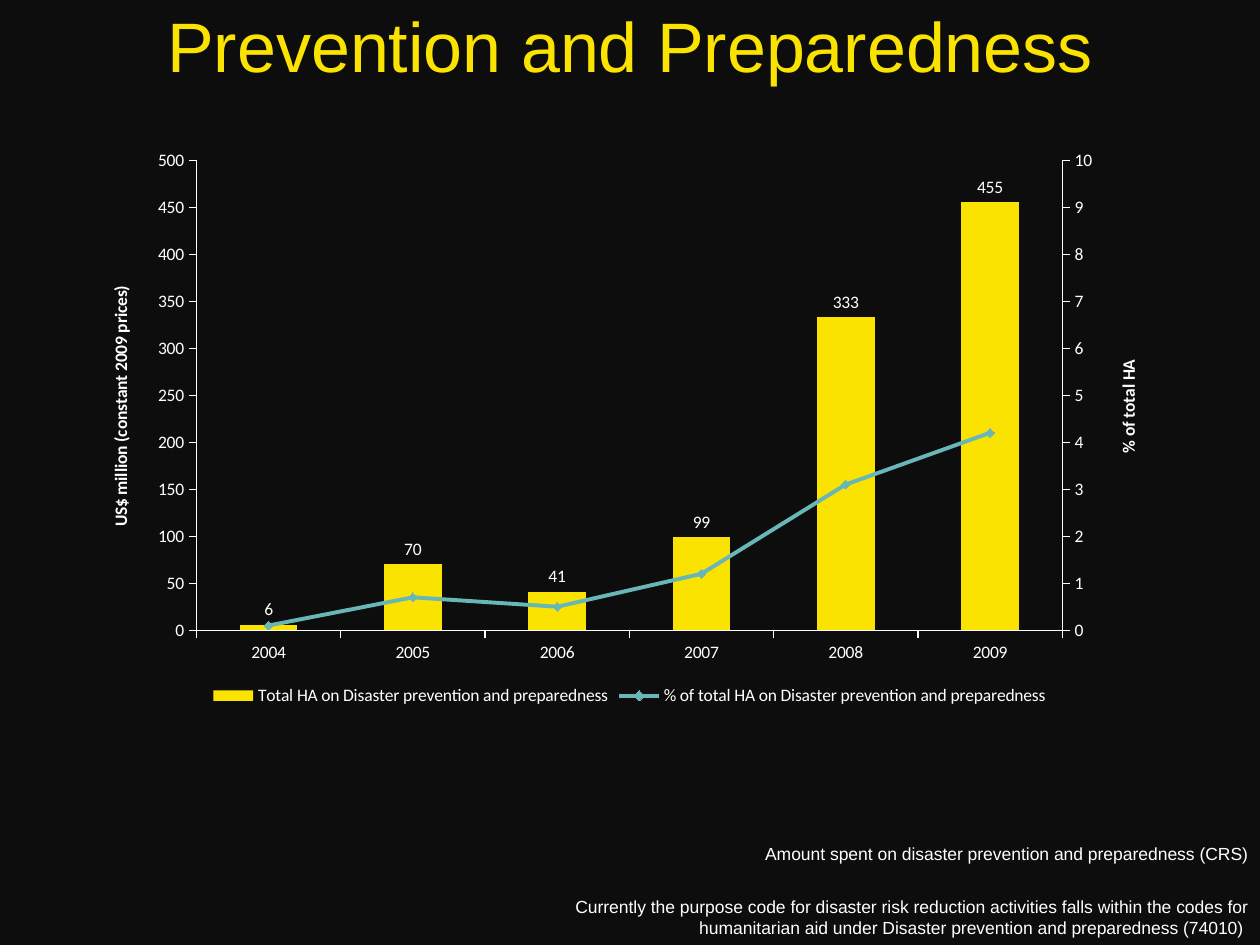
from copy import deepcopy

from lxml import etree
from pptx import Presentation
from pptx.chart.axis import ValueAxis
from pptx.chart.data import CategoryChartData
from pptx.dml.color import RGBColor
from pptx.enum.chart import XL_CHART_TYPE as ChartType, XL_LABEL_POSITION as LabelPosition
from pptx.enum.chart import XL_LEGEND_POSITION as LegendPosition, XL_MARKER_STYLE as Marker
from pptx.enum.chart import XL_TICK_MARK as Tick
from pptx.enum.text import MSO_ANCHOR as Anchor, MSO_AUTO_SIZE as AutoSize, PP_ALIGN as Align
from pptx.oxml import parse_xml
from pptx.oxml.ns import qn
from pptx.util import Inches, Pt

BLACK, WHITE, YELLOW, TEAL = "0D0D0D", "FFFFFF", "FAE300", "68B6B8"
TITLE = "Prevention and Preparedness"
NOTES = [
    ("Amount spent on disaster prevention and preparedness (CRS)", (3.62, 6.64, 6.38, 0.27)),
    ("Currently the purpose code for disaster risk reduction activities falls within the codes for "
     "humanitarian aid under Disaster prevention and preparedness (74010) ", (3.86, 7.06, 6.14, 0.44)),
]
YEARS = ["2004", "2005", "2006", "2007", "2008", "2009"]
SERIES = [
    ("Total HA on Disaster prevention and preparedness", [6, 70, 41, 99, 333, 455]),
    ("% of total HA on Disaster prevention and preparedness", [0.1, 0.7, 0.5, 1.2, 3.1, 4.2]),
]
LEFT_AXIS = ("US$ million (constant 2009 prices)", 500, 50)
RIGHT_AXIS = ("% of total HA", 10, 1)
PLOT_AREA = {"x": 0.1, "y": 0.04, "w": 0.8, "h": 0.82}
RIGHT_IDS = ("50010", "50020")


def color(value):
    return RGBColor.from_string(value)


def paint(fill, value):
    fill.solid()
    fill.fore_color.rgb = color(value)


def style_font(font, name, size, value):
    font.name = name
    font.size = Pt(size)
    font.color.rgb = color(value)


def write(box, text, place, size, value, align):
    box.left, box.top, box.width, box.height = map(Inches, place)
    frame = box.text_frame
    frame.word_wrap = True
    frame.text = text
    para = frame.paragraphs[0]
    para.alignment = align
    style_font(para.runs[0].font, "Arial", size, value)
    return frame


def style_axis(axis):
    axis.major_tick_mark = Tick.OUTSIDE
    axis.minor_tick_mark = Tick.NONE
    axis.format.line.color.rgb = color(WHITE)
    axis.format.line.width = Pt(0.75)


def style_value_axis(axis, title, top, step):
    style_axis(axis)
    axis.has_major_gridlines = False
    axis.minimum_scale, axis.maximum_scale, axis.major_unit = 0, top, step
    axis.tick_labels.number_format = "0"
    axis.tick_labels.number_format_is_linked = False
    frame = axis.axis_title.text_frame
    frame.text = title
    font = frame.paragraphs[0].runs[0].font
    style_font(font, "Calibri", 10, WHITE)
    font.bold = True
    body = axis.axis_title._element.find(".//" + qn("a:bodyPr"))
    body.set("rot", "-5400000")
    body.set("vert", "horz")


def fix_plot_area(area):
    layout = area.find(qn("c:layout"))
    if layout is None:
        layout = etree.Element(qn("c:layout"))
        area.insert(0, layout)
    manual = etree.SubElement(layout, qn("c:manualLayout"))
    settings = {"layoutTarget": "inner", "xMode": "edge", "yMode": "edge", **PLOT_AREA}
    for name, value in settings.items():
        etree.SubElement(manual, qn("c:" + name)).set("val", str(value))


def move_line_to_right_axis(area):
    bars = area.find(qn("c:barChart"))
    line_series = bars.findall(qn("c:ser"))[1]
    for flag in line_series.findall(qn("c:invertIfNegative")):
        line_series.remove(flag)
    lines = parse_xml(
        '<c:lineChart xmlns:c="http://schemas.openxmlformats.org/drawingml/2006/chart">'
        '<c:grouping val="standard"/><c:varyColors val="0"/><c:marker val="1"/>'
        f'<c:axId val="{RIGHT_IDS[0]}"/><c:axId val="{RIGHT_IDS[1]}"/></c:lineChart>')
    lines.insert(2, line_series)
    bars.addnext(lines)

    value_axis = area.find(qn("c:valAx"))
    right_category = deepcopy(area.find(qn("c:catAx")))
    right_value = deepcopy(value_axis)
    value_axis.addnext(right_category)
    right_category.addnext(right_value)
    for axis, own, other in ((right_category, *RIGHT_IDS), (right_value, *RIGHT_IDS[::-1])):
        axis.find(qn("c:axId")).set("val", own)
        axis.find(qn("c:crossAx")).set("val", other)
    right_category.find(qn("c:delete")).set("val", "1")
    right_value.find(qn("c:axPos")).set("val", "r")
    right_value.find(qn("c:crosses")).set("val", "max")
    return ValueAxis(right_value)


def add_spending_chart(page):
    data = CategoryChartData()
    data.categories = YEARS
    for name, values in SERIES:
        data.add_series(name, values)
    place = map(Inches, (0.7, 1.09, 8.59, 4.55))
    chart = page.shapes.add_chart(ChartType.COLUMN_CLUSTERED, *place, data).chart
    style_font(chart.font, "Calibri", 10, WHITE)
    chart.has_title = False
    chart.has_legend = True
    chart.legend.position = LegendPosition.BOTTOM
    chart.legend.include_in_layout = False

    style_axis(chart.category_axis)
    style_value_axis(chart.value_axis, *LEFT_AXIS)
    area = chart._chartSpace.find(".//" + qn("c:plotArea"))
    fix_plot_area(area)
    style_value_axis(move_line_to_right_axis(area), *RIGHT_AXIS)

    bar_plot, line_plot = chart.plots
    bar_plot.gap_width = 150
    bar_plot.vary_by_categories = False
    bars, line = bar_plot.series[0], line_plot.series[0]
    paint(bars.format.fill, YELLOW)
    labels = bars.data_labels
    labels.show_value = True
    labels.position = LabelPosition.OUTSIDE_END
    labels.number_format = "0"
    labels.number_format_is_linked = False

    line.smooth = False
    line.format.line.color.rgb = color(TEAL)
    line.format.line.width = Pt(2.25)
    line.marker.style = Marker.DIAMOND
    line.marker.size = 5
    paint(line.marker.format.fill, TEAL)
    line.marker.format.line.color.rgb = color(TEAL)


def main():
    deck = Presentation()
    deck.slide_width, deck.slide_height = Inches(10), Inches(7.5)
    page = deck.slides.add_slide(deck.slide_layouts[5])
    paint(page.background.fill, BLACK)
    title = write(page.shapes.title, TITLE, (0, 0, 10, 0.7), 40, YELLOW, Align.CENTER)
    title.vertical_anchor = Anchor.MIDDLE
    title.auto_size = AutoSize.NONE
    for text, place in NOTES:
        box = page.shapes.add_textbox(0, 0, 0, 0)
        frame = write(box, text, place, 10, WHITE, Align.RIGHT)
        frame.auto_size = AutoSize.SHAPE_TO_FIT_TEXT
    add_spending_chart(page)
    deck.save("out.pptx")


if __name__ == "__main__":
    main()
